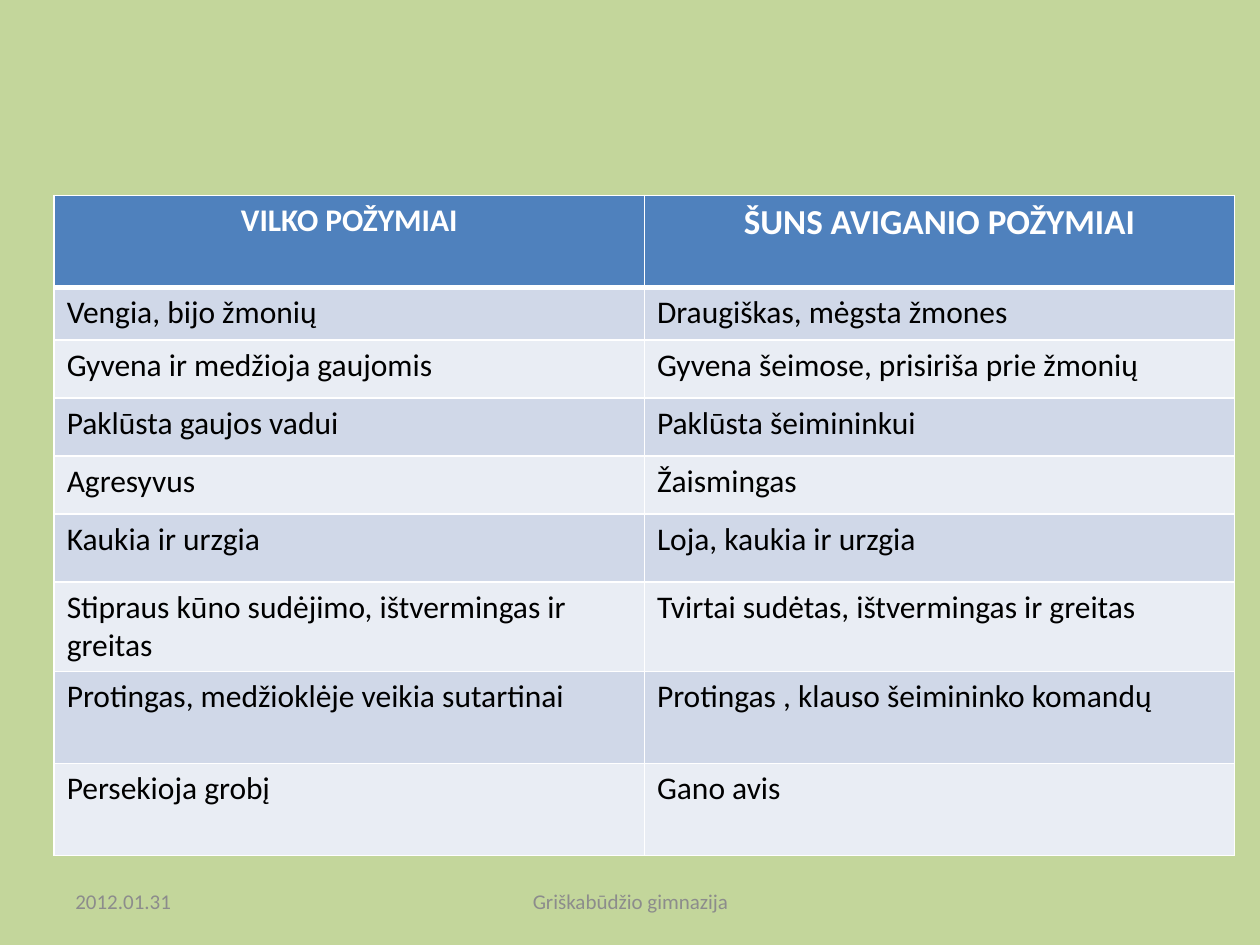
from dataclasses import dataclass

from lxml.etree import SubElement
from pptx import Presentation
from pptx.dml.color import RGBColor as RGB
from pptx.enum.text import MSO_ANCHOR as ANCHOR, PP_ALIGN as ALIGN
from pptx.oxml.ns import qn
from pptx.util import Inches, Pt


@dataclass(frozen=True)
class Theme:
    font: str = "Calibri"
    background: str = "C3D69B"
    header: str = "4F81BD"
    bands: tuple = ("D0D8E8", "E9EDF4")
    border: str = "FFFFFF"
    header_text: str = "FFFFFF"
    body_text: str = "000000"
    footer_text: str = "8C8C8C"
    header_sizes: tuple = (18, 20)
    body_size: int = 18
    footer_size: int = 12
    thin: int = 1
    thick: int = 3


ROWS = [
    ("VILKO POŽYMIAI", "ŠUNS AVIGANIO POŽYMIAI"),
    ("Vengia, bijo žmonių", "Draugiškas, mėgsta žmones"),
    ("Gyvena ir medžioja gaujomis", "Gyvena šeimose, prisiriša prie žmonių"),
    ("Paklūsta gaujos vadui", "Paklūsta šeimininkui"),
    ("Agresyvus", "Žaismingas"),
    ("Kaukia ir urzgia", "Loja, kaukia ir urzgia"),
    ("Stipraus kūno sudėjimo, ištvermingas ir greitas",
     "Tvirtai sudėtas, ištvermingas ir greitas"),
    ("Protingas, medžioklėje veikia sutartinai",
     "Protingas , klauso šeimininko komandų"),
    ("Persekioja grobį", "Gano avis"),
]
ROW_HEIGHTS = [0.73, 0.42, 0.46, 0.46, 0.46, 0.54, 0.68, 0.73, 0.73]


def write(tf, text, *, font, size, color, bold=False, align=ALIGN.LEFT):
    p = tf.paragraphs[0]
    p.alignment = align
    r = p.add_run()
    r.text = text
    r.font.name = font
    r.font.size = Pt(size)
    r.font.bold = bold
    r.font.color.rgb = RGB.from_string(color)


class SlideBuilder:
    def __init__(self, slide, theme):
        self.s = slide
        self.theme = theme

    def background(self):
        fill = self.s.background.fill
        fill.solid()
        fill.fore_color.rgb = RGB.from_string(self.theme.background)

    def borders(self, cell, **widths):
        tc_pr = cell._tc.get_or_add_tcPr()
        for side in "LRTB":
            width = widths.get(side, self.theme.thin)
            ln = SubElement(tc_pr, qn(f"a:ln{side}"), w=str(Pt(width)))
            fill = SubElement(ln, qn("a:solidFill"))
            SubElement(fill, qn("a:srgbClr"), val=self.theme.border)

    def cell(self, cell, text, row, col):
        t = self.theme
        if row == 0:
            color = t.header
            self.borders(cell, B=t.thick)
            write(cell.text_frame, text, font=t.font, size=t.header_sizes[col],
                  color=t.header_text, bold=True, align=ALIGN.CENTER)
        else:
            color = t.bands[(row - 1) % 2]
            self.borders(cell, T=t.thick if row == 1 else t.thin)
            write(cell.text_frame, text, font=t.font, size=t.body_size,
                  color=t.body_text)
        cell.fill.solid()
        cell.fill.fore_color.rgb = RGB.from_string(color)

    def table(self, rows, heights, left, top, width):
        cols = len(rows[0])
        table = self.s.shapes.add_table(
            len(rows), cols, Inches(left), Inches(top),
            Inches(width), Inches(sum(heights))).table
        for i, (texts, height) in enumerate(zip(rows, heights)):
            table.rows[i].height = Inches(height)
            for j, text in enumerate(texts):
                self.cell(table.cell(i, j), text, i, j)

    def footer(self, text, left, width, align=ALIGN.LEFT):
        sp = self.s.shapes.add_textbox(
            Inches(left), Inches(6.95), Inches(width), Inches(0.4))
        tf = sp.text_frame
        tf.word_wrap = True
        tf.vertical_anchor = ANCHOR.MIDDLE
        write(tf, text, font=self.theme.font, size=self.theme.footer_size,
              color=self.theme.footer_text, align=align)


def main():
    prs = Presentation()
    prs.slide_width, prs.slide_height = Inches(10), Inches(7.5)
    builder = SlideBuilder(prs.slides.add_slide(prs.slide_layouts[6]), Theme())
    builder.background()
    builder.table(ROWS, ROW_HEIGHTS, left=0.43, top=1.55, width=9.37)
    builder.footer("2012.01.31", left=0.5, width=2.33)
    builder.footer("Griškabūdžio gimnazija", left=3.42, width=3.17,
                   align=ALIGN.CENTER)
    prs.save("out.pptx")


if __name__ == "__main__":
    main()
